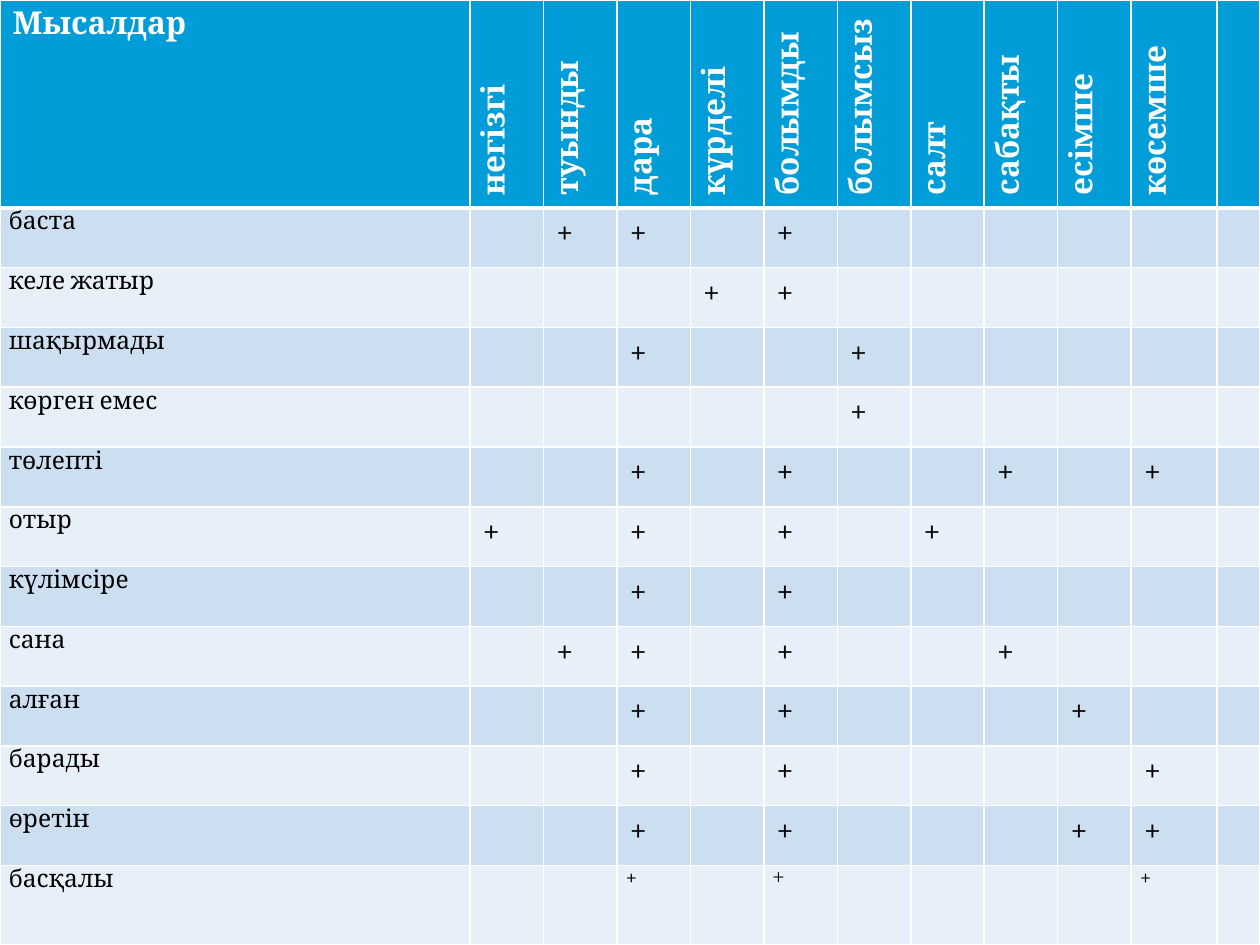
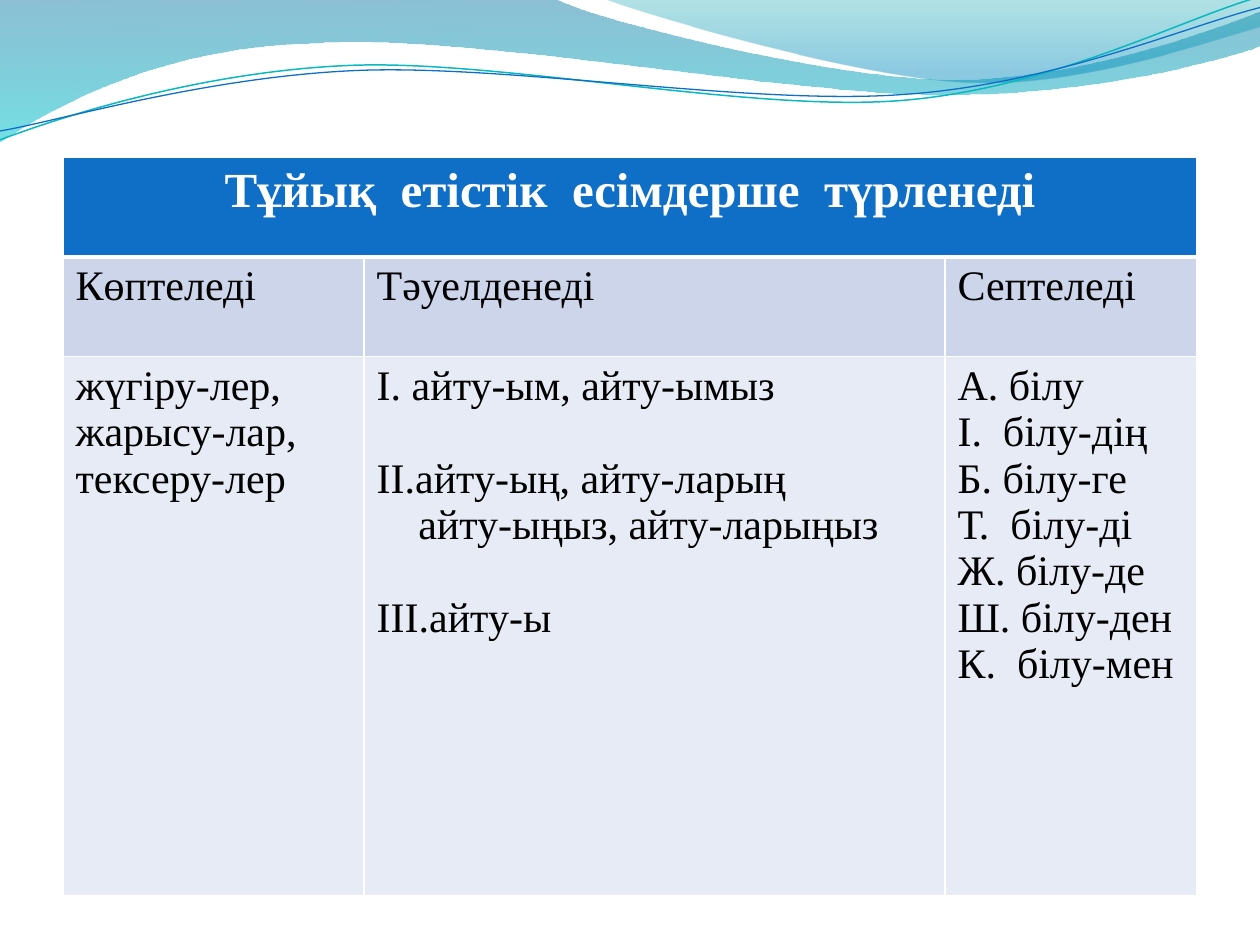
from collections import namedtuple
from dataclasses import dataclass

from lxml.etree import SubElement
from pptx import Presentation
from pptx.dml.color import RGBColor
from pptx.enum.text import PP_ALIGN as Align
from pptx.oxml.ns import qn
from pptx.util import Inches, Pt

Box = namedtuple("Box", "left top width height")


@dataclass(frozen=True)
class Theme:
    white: str = "FFFFFF"
    black: str = "000000"
    sky: str = "009DD9"
    sky_bands: tuple = ("CCDFF1", "E7EFF8")
    blue: str = "0F6FC6"
    blue_bands: tuple = ("CCD5EA", "E7EBF5")
    teal: str = "0AB8BF"
    serif: str = "Cambria"
    roman: str = "Times New Roman"
    title: int = 28
    body: int = 24
    label: int = 18
    word: int = 14
    small: int = 12
    thin: int = 1
    thick: int = 3


THEME = Theme()
PAGE = Box(0, 0, 10, 7.5)

# Each curve is a start point followed by segments:
# two numbers make a straight line, six make a Bézier curve.
WAVE_BAND = [
    (0, 0), (4.4, -0.01),
    (4.76, 0.17, 6.64, 0.63, 7.58, 0.63), (8.53, 0.63, 9.58, 0.26, 10, 0.09),
    (10.01, 0.36),
    (9.83, 0.44, 8.7, 0.76, 7.46, 0.75), (6.22, 0.75, 3.82, 0.28, 2.57, 0.34),
    (1.29, 0.36, 0.46, 0.83, -0.01, 1.13), (0, 0),
]
WAVE_CREST = [
    (4.79, -0.01),
    (5.09, 0.11, 6.82, 0.62, 7.69, 0.65), (8.56, 0.69, 9.61, 0.32, 10, 0.21),
    (10, 0), (4.79, -0.01),
]
TEAL_THREAD = [
    (0, 1.11),
    (0.48, 0.93, 1.58, 0.57, 2.77, 0.52), (3.95, 0.47, 5.93, 0.89, 7.13, 0.8),
    (8.33, 0.71, 9.38, 0.15, 9.98, -0.02),
]
BLUE_THREAD = [
    (0, 1.04),
    (0.47, 0.96, 1.64, 0.61, 2.83, 0.56), (4.03, 0.51, 5.97, 0.84, 7.17, 0.75),
    (8.36, 0.67, 9.41, 0.21, 10, 0.06),
]
# curve, stops of (position, colour, opacity in percent)
WAVE_FILLS = [
    (WAVE_BAND, [(0, "0074A1", 45), (1, "00C6CF", 55)]),
    (WAVE_CREST, [(0, "00A1A9", 30), (0.8, "008BBF", 45)]),
]
WAVE_LINES = [(TEAL_THREAD, THEME.teal, 0.85), (BLUE_THREAD, THEME.blue, 0.75)]

VERB_KINDS = ["негізгі", "туынды", "дара", "күрделі", "болымды", "болымсыз",
              "салт", "сабақты", "есімше", "көсемше"]
VERB_MARKS = {
    "баста": ["туынды", "дара", "болымды"],
    "келе жатыр": ["күрделі", "болымды"],
    "шақырмады": ["дара", "болымсыз"],
    "көрген емес": ["болымсыз"],
    "төлепті": ["дара", "болымды", "сабақты", "көсемше"],
    "отыр": ["негізгі", "дара", "болымды", "салт"],
    "күлімсіре": ["дара", "болымды"],
    "сана": ["туынды", "дара", "болымды", "сабақты"],
    "алған": ["дара", "болымды", "есімше"],
    "барады": ["дара", "болымды", "көсемше"],
    "өретін": ["дара", "болымды", "есімше", "көсемше"],
    "басқалы": ["дара", "болымды", "көсемше"],
}

INFLECTION_TITLE = "Тұйық  етістік  есімдерше  түрленеді"
INFLECTION_HEADS = ["Көптеледі", "Тәуелденеді", "Септеледі"]
PLURALS = "жүгіру-лер, жарысу-лар, тексеру-лер"
HANGING = {"marL": Inches(0.38), "indent": -Inches(0.38)}
INDENTED = {"marL": Inches(0.33), "indent": 0}
# text, indents, whether a line's gap comes before it
POSSESSIVES = [
    ("І. айту-ым, айту-ымыз", HANGING, False),
    ("ІІ.айту-ың, айту-ларың", HANGING, True),
    ("айту-ыңыз, айту-ларыңыз", INDENTED, False),
    ("ІІІ.айту-ы", HANGING, True),
]
CASES = ["А. білу", "І.  білу-дің", "Б. білу-ге", "Т.  білу-ді",
         "Ж. білу-де", "Ш. білу-ден", "К.  білу-мен"]


def rgb(color):
    return RGBColor.from_string(color)


def add_curve(page, box, curve, close):
    """Add a freeform through all knots, then bend its curved segments."""
    points = [(Inches(segment[i]), Inches(segment[i + 1]))
              for segment in curve for i in range(0, len(segment), 2)]
    builder = page.shapes.build_freeform(*points[0])
    builder.add_line_segments(points[1:], close=close)
    shape = builder.convert_to_shape(Inches(box.left), Inches(box.top))
    shape.shadow.inherit = False

    lines = iter(list(shape._element.iter(qn("a:lnTo"))))
    for segment in curve[1:]:
        first = next(lines)
        if len(segment) == 6:
            first.tag = qn("a:cubicBezTo")
            for line in (next(lines), next(lines)):
                first.append(line[0])
                line.getparent().remove(line)
    return shape


def add_waves(page, box):
    for curve, stops in WAVE_FILLS:
        shape = add_curve(page, box, curve, True)
        shape.line.fill.background()
        shape.fill.gradient()
        shape.fill.gradient_angle = 270
        for stop, (position, color, opacity) in zip(shape.fill.gradient_stops, stops):
            stop.position = position
            stop.color.rgb = rgb(color)
        for node, stop in zip(shape._element.iter(qn("a:srgbClr")), stops):
            SubElement(node, qn("a:alpha"), val=str(stop[2] * 1000))
    for curve, color, width in WAVE_LINES:
        shape = add_curve(page, box, curve, False)
        shape.fill.background()
        shape.line.color.rgb = rgb(color)
        shape.line.width = Pt(width)


def move_to_layout(page):
    """Hand the shapes of a page to its layout, so that all pages share them."""
    for shape in list(page.shapes):
        page.slide_layout.shapes._spTree.append(shape._element)


def add_borders(cell, widths):
    """Draw white borders; widths are in points for each side L, R, T, B."""
    properties = cell._tc.get_or_add_tcPr()
    for side, width in widths.items():
        line = SubElement(properties, qn(f"a:ln{side}"), w=str(Pt(width)))
        SubElement(SubElement(line, qn("a:solidFill")), qn("a:srgbClr"), val=THEME.white)


def add_grid(page, box, columns, rows, head_fill, bands):
    """Add a table with a coloured head row and banded rows below."""
    frame = page.shapes.add_table(len(rows), len(columns), *map(Inches, box))
    table = frame.table
    for column, width in zip(table.columns, columns):
        column.width = Inches(width)
    for index, (row, height) in enumerate(zip(table.rows, rows)):
        row.height = Inches(height)
        for cell in row.cells:
            add_borders(cell, {
                "L": THEME.thin, "R": THEME.thin,
                "T": THEME.thick if index == 1 else THEME.thin,
                "B": THEME.thick if index == 0 else THEME.thin,
            })
            cell.fill.solid()
            cell.fill.fore_color.rgb = rgb(bands[(index - 1) % 2] if index else head_fill)
    return table


def write_cell(cell, lines, size, font, color=THEME.black, bold=False):
    """Write one paragraph for each line and return the paragraphs."""
    look = {"size": Pt(size), "name": font, "bold": bold}
    frame = cell.text_frame
    for index, line in enumerate(lines):
        para = frame.add_paragraph() if index else frame.paragraphs[0]
        span = para.add_run()
        span.text = line
        for name, value in look.items():
            setattr(span.font, name, value)
        span.font.color.rgb = rgb(color)
    return frame.paragraphs


def tighten(cell):
    margins = {"margin_left": 0.07, "margin_right": 0.07, "margin_top": 0, "margin_bottom": 0}
    for name, value in margins.items():
        setattr(cell, name, Inches(value))


def add_verb_table(page, box):
    first, wide, narrow, head, last = 3.73, 0.68, 0.34, 1.65, 0.63
    kind_width = (box.width - first - wide - narrow) / (len(VERB_KINDS) - 1)
    row_height = (box.height - head - last) / (len(VERB_MARKS) - 1)
    columns = [first] + [kind_width] * (len(VERB_KINDS) - 1) + [wide, narrow]
    rows = [head] + [row_height] * (len(VERB_MARKS) - 1) + [last]
    table = add_grid(page, box, columns, rows, THEME.sky, THEME.sky_bands)

    for column, text in enumerate(["Мысалдар"] + VERB_KINDS):
        cell = table.cell(0, column)
        write_cell(cell, [text], THEME.label, THEME.serif, THEME.white, True)
        if column:
            cell._tc.get_or_add_tcPr().set("vert", "vert270")
    for row, (word, kinds) in enumerate(VERB_MARKS.items(), 1):
        is_last = row == len(VERB_MARKS)
        cell = table.cell(row, 0)
        write_cell(cell, [word], THEME.word, THEME.serif)
        tighten(cell)
        for kind in kinds:
            cell = table.cell(row, VERB_KINDS.index(kind) + 1)
            font = THEME.roman if is_last and kind == "болымды" else THEME.serif
            write_cell(cell, ["+"], THEME.small if is_last else THEME.label, font)
            if is_last:
                tighten(cell)


def add_inflection_table(page, box):
    head = 0.79
    table = add_grid(page, box, [2.39, 4.61, 2], [head, head, box.height - 2 * head],
                     THEME.blue, THEME.blue_bands)
    title = table.cell(0, 0)
    title.merge(table.cell(0, 2))
    write_cell(title, [INFLECTION_TITLE], THEME.title, THEME.roman,
               THEME.white, True)[0].alignment = Align.CENTER

    possessive_lines = [text for text, indents, gap in POSSESSIVES]
    for column, lines in enumerate([[PLURALS], possessive_lines, CASES]):
        write_cell(table.cell(1, column), [INFLECTION_HEADS[column]], THEME.body, THEME.roman)
        write_cell(table.cell(2, column), lines, THEME.body, THEME.roman)
    paragraphs = table.cell(2, 1).text_frame.paragraphs
    for para, (text, indents, gap) in zip(paragraphs, POSSESSIVES):
        for name, value in indents.items():
            para._p.get_or_add_pPr().set(name, str(value))
        if gap:
            para.space_before = Pt(26.5)


def main():
    deck = Presentation()
    deck.slide_width, deck.slide_height = Inches(PAGE.width), Inches(PAGE.height)
    blank = deck.slide_layouts[6]

    verb_page = deck.slides.add_slide(blank)
    add_waves(verb_page, PAGE)
    move_to_layout(verb_page)
    add_verb_table(verb_page, PAGE)

    inflection_page = deck.slides.add_slide(blank)
    add_inflection_table(inflection_page, Box(0.5, 1.25, 9, 5.86))

    deck.save("out.pptx")


if __name__ == "__main__":
    main()
